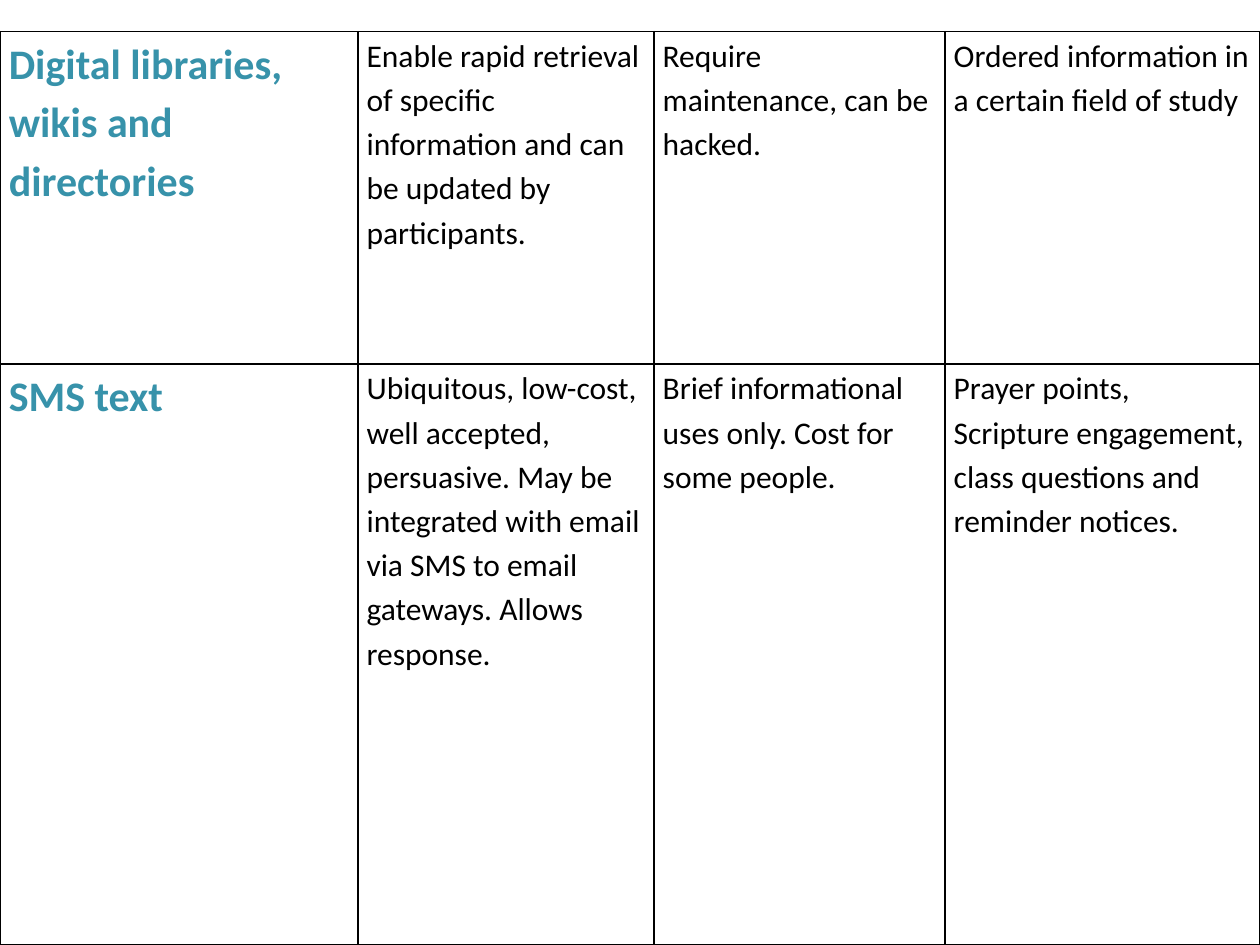
"""Build a slide with a table comparing digital libraries and SMS text."""
from lxml import etree
from pptx import Presentation
from pptx.dml.color import RGBColor
from pptx.oxml.ns import qn
from pptx.util import Inches, Pt

TEAL = RGBColor(0x37, 0x92, 0xAA)
BLACK = RGBColor(0, 0, 0)
COLUMN_WIDTHS = [2.84, 2.35, 2.31, 2.5]
ROW_HEIGHTS = [2.64, 4.61]
MEDIA = [
    [
        "Digital libraries, wikis and directories",
        "Enable rapid retrieval of specific information and can be updated by participants.",
        "Require maintenance, can be hacked.",
        "Ordered information in a certain field of study",
    ],
    [
        "SMS text",
        "Ubiquitous, low-cost, well accepted, persuasive. May be integrated with email "
        "via SMS to email gateways. Allows response.",
        "Brief informational uses only. Cost for some people.",
        "Prayer points, Scripture engagement, class questions and reminder notices.",
    ],
]
MARGINS = {
    "margin_left": Inches(0.07),
    "margin_right": Inches(0.07),
    "margin_top": 0,
    "margin_bottom": 0,
}
MEDIUM_FONT = {"name": "Calibri", "size": Pt(24), "bold": True}
DETAIL_FONT = {"name": "Calibri", "size": Pt(18), "bold": False}


def apply_format(target, values):
    for attribute, value in values.items():
        setattr(target, attribute, value)


def add_borders(cell):
    properties = cell._tc.get_or_add_tcPr()
    for position, side in enumerate(["lnL", "lnR", "lnT", "lnB"]):
        line = etree.Element(qn(f"a:{side}"), w=str(Pt(1)))
        fill = etree.SubElement(line, qn("a:solidFill"))
        etree.SubElement(fill, qn("a:srgbClr"), val=str(BLACK))
        properties.insert(position, line)


presentation = Presentation()
presentation.slide_width = Inches(10)
presentation.slide_height = Inches(7.5)
slide = presentation.slides.add_slide(presentation.slide_layouts[6])

comparison = slide.shapes.add_table(
    len(MEDIA), len(COLUMN_WIDTHS), Inches(0), Inches(0.25), Inches(10), Inches(7.25)
).table
apply_format(comparison, {"first_row": False, "horz_banding": False})
for column, width in zip(comparison.columns, COLUMN_WIDTHS):
    column.width = Inches(width)
for row, height in zip(comparison.rows, ROW_HEIGHTS):
    row.height = Inches(height)

for row, wording in zip(comparison.rows, MEDIA):
    for index, (cell, text) in enumerate(zip(row.cells, wording)):
        apply_format(cell, MARGINS)
        cell.fill.background()
        add_borders(cell)
        cell.text = text
        paragraph = cell.text_frame.paragraphs[0]
        paragraph.line_spacing = 1.15
        font = paragraph.runs[0].font
        apply_format(font, DETAIL_FONT if index else MEDIUM_FONT)
        font.color.rgb = BLACK if index else TEAL

presentation.save("out.pptx")
